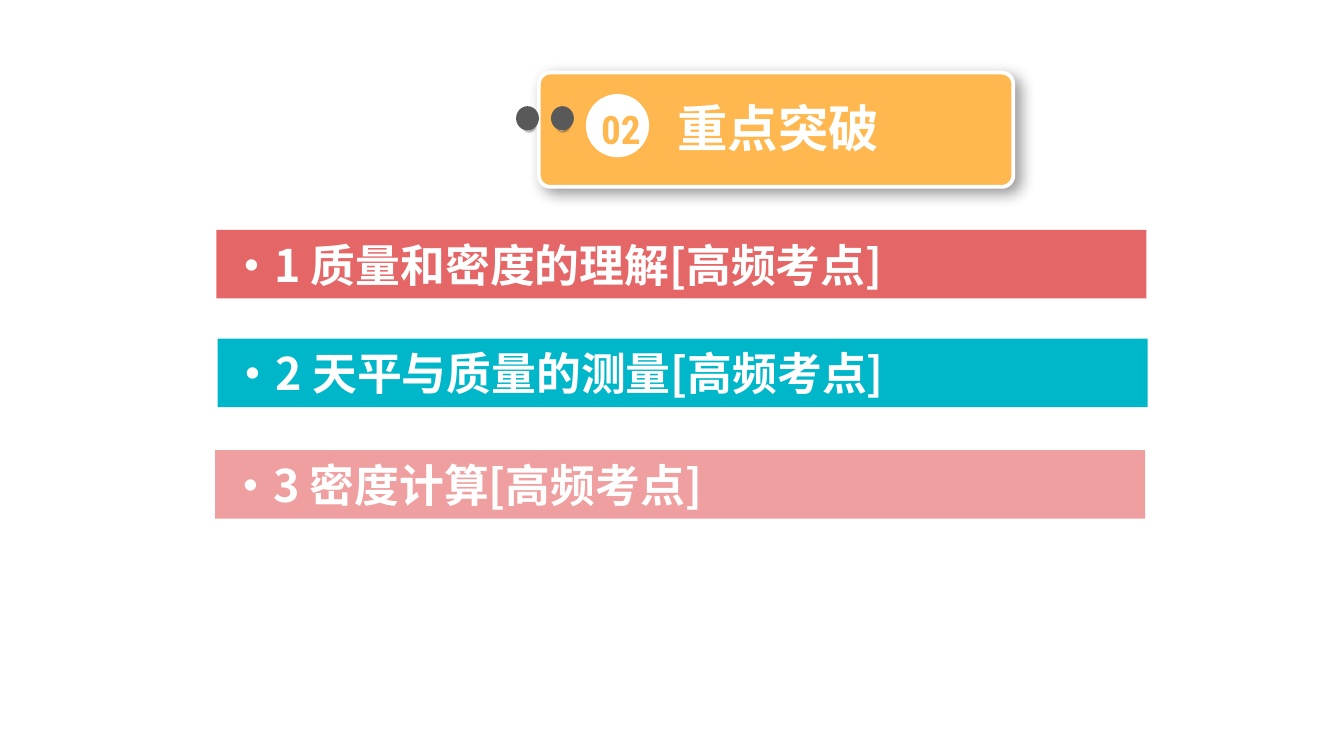
from lxml import etree
from pptx import Presentation
from pptx.dml.color import RGBColor
from pptx.enum.shapes import MSO_SHAPE
from pptx.enum.text import MSO_ANCHOR, PP_ALIGN
from pptx.oxml.ns import qn
from pptx.util import Inches, Pt

ROUNDED, OVAL, BAR = MSO_SHAPE.ROUNDED_RECTANGLE, MSO_SHAPE.OVAL, MSO_SHAPE.RECTANGLE
LEFT, CENTER = PP_ALIGN.LEFT, PP_ALIGN.CENTER
MIDDLE = MSO_ANCHOR.MIDDLE
COLORS = {
    "orange": "FFB850", "white": "FFFFFF", "gray": "595959", "black": "000000",
    "silver": "A6A6A6", "pale": "F2F2F2",
    "red": "E56666", "teal": "00B7CA", "pink": "EF9F9F",
}
CJK = "Noto Sans CJK SC"
METAL = [(0, "white"), (17, "silver"), (35, "pale"), (55, "silver"), (75, "pale"), (100, "silver")]


def add_block(kind, left, top, width, height, color, shadow=None):
    block = slide.shapes.add_shape(kind, Inches(left), Inches(top), Inches(width), Inches(height))
    block.fill.solid()
    block.fill.fore_color.rgb = RGBColor.from_string(COLORS[color])
    block.line.fill.background()
    block.shadow.inherit = False
    if shadow:
        blur, distance = shadow
        effects = block._element.spPr.find(qn("a:effectLst"))
        outer = etree.SubElement(effects, qn("a:outerShdw"), blurRad=str(Pt(blur)),
                                 dist=str(Pt(distance)), dir="2700000", algn="tl", rotWithShape="0")
        shade = etree.SubElement(outer, qn("a:srgbClr"), val=COLORS["black"])
        etree.SubElement(shade, qn("a:alpha"), val="40000")
    return block


def write_text(holder, text, size, color="white", font=CJK, align=CENTER):
    frame = holder.text_frame
    frame.word_wrap = True
    frame.vertical_anchor = MIDDLE
    frame.margin_left = frame.margin_right = Inches(0.1)
    frame.margin_top = frame.margin_bottom = Inches(0.05)
    paragraph = frame.paragraphs[0]
    paragraph.alignment = align
    run = paragraph.add_run()
    run.text = text
    run.font.size = Pt(size)
    run.font.bold = True
    run.font.name = font
    run.font.color.rgb = RGBColor.from_string(COLORS[color])
    etree.SubElement(run.font._element, qn("a:ea"), typeface=font)


deck = Presentation()
deck.slide_width = Inches(10)
deck.slide_height = Inches(10 * 9 / 16)
slide = deck.slides.add_slide(deck.slide_layouts[5])

card = add_block(ROUNDED, 4.01, 0.54, 3.53, 0.85, "orange", shadow=(8, 4))
card.adjustments[0] = 0.1
card.line.color.rgb = RGBColor.from_string(COLORS["white"])
card.line.width = Pt(2)

for ring_left, hole_left in [(4.13, 4.1), (3.88, 3.84)]:
    ring = add_block(OVAL, ring_left, 0.87, 0.1, 0.1, "silver", shadow=(1, 1))
    ring.rotation = 270
    ring.fill.gradient()
    ring.fill.gradient_angle = 315
    stops = ring._element.spPr.find(".//" + qn("a:gsLst"))
    stops.clear()
    for position, tone in METAL:
        stop = etree.SubElement(stops, qn("a:gs"), pos=str(position * 1000))
        etree.SubElement(stop, qn("a:srgbClr"), val=COLORS[tone])
    add_block(OVAL, hole_left, 0.79, 0.17, 0.18, "gray")

heading = slide.shapes.title
heading.left, heading.top = Inches(4.55), Inches(0.67)
heading.width, heading.height = Inches(2.48), Inches(0.56)
write_text(heading, "重点突破", 27)
card._element.getparent().append(heading._element)

add_block(OVAL, 4.36, 0.7, 0.47, 0.47, "white")
number = slide.shapes.add_textbox(Inches(4.34), Inches(0.73), Inches(0.56), Inches(0.45))
write_text(number, "02", 21, color="orange", font="Roboto Condensed")

topics = [
    (1.61, 1.71, "red", "·1 质量和密度的理解[高频考点]"),
    (1.62, 2.52, "teal", "·2 天平与质量的测量[高频考点]"),
    (1.6, 3.35, "pink", "·3 密度计算[高频考点]"),
]
for left, top, color, topic in topics:
    bar = add_block(BAR, left, top, 6.92, 0.51, color)
    write_text(bar, topic, 24, align=LEFT)

deck.save("out.pptx")
